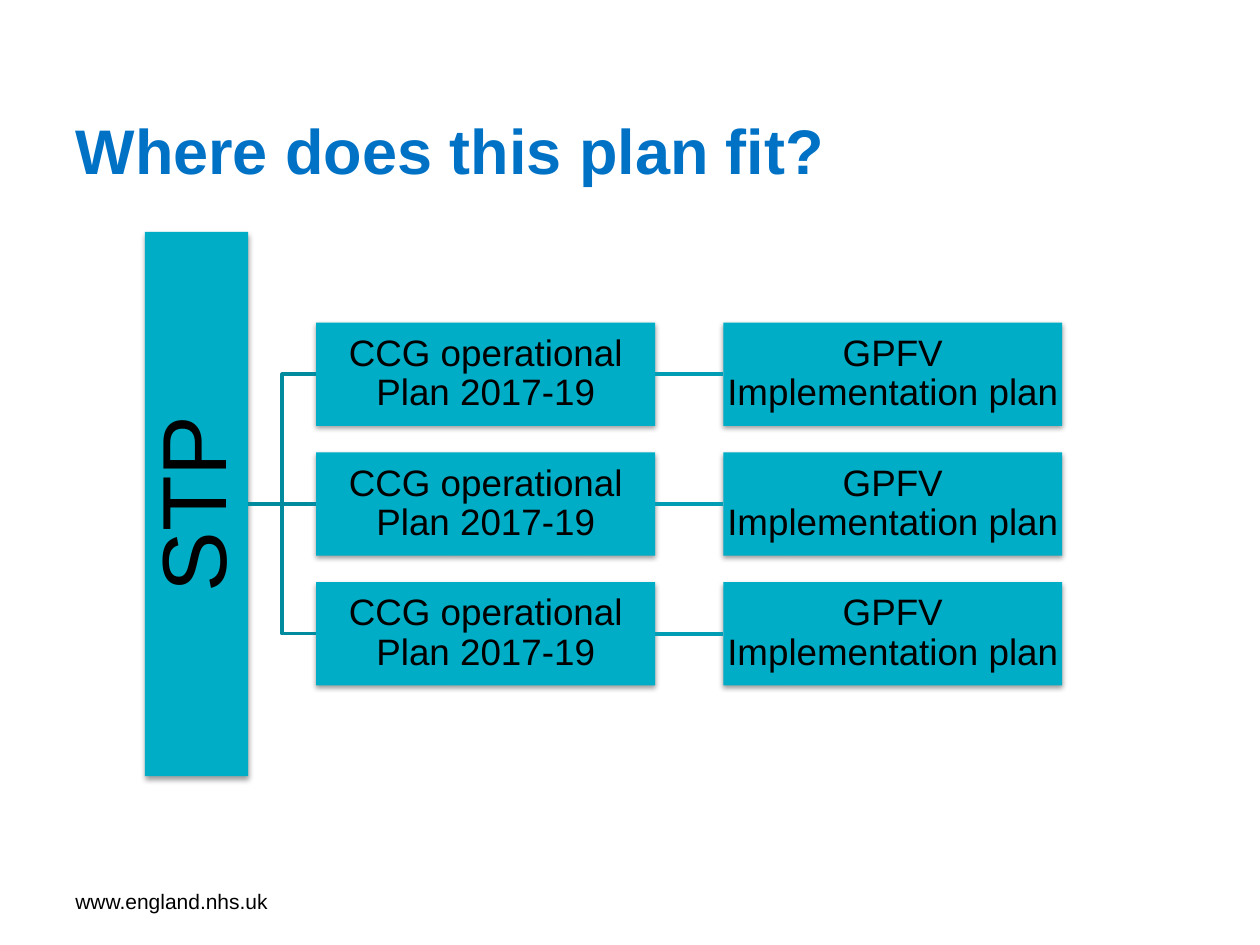
"""Build the slide showing how practice plans fit beneath the STP."""
from lxml import etree
from pptx import Presentation
from pptx import util as u
from pptx.dml.color import RGBColor
from pptx.enum import shapes, text
from pptx.oxml import parse_xml
from pptx.oxml.ns import nsdecls, qn

COLOURS = {"title": "0072C6", "box": "00ADC6", "text": "000000",
           "branch": "008B9F", "link": "009DB4"}
SHADOW = (f'<a:outerShdw {nsdecls("a")} blurRad="39370" dist="20320" dir="5400000" '
          'rotWithShape="0"><a:srgbClr val="000000"><a:alpha val="38000"/>'
          '</a:srgbClr></a:outerShdw>')
MARGINS = ("margin_left", "margin_top", "margin_right", "margin_bottom")


class PlanSlide:
    """Hold the style and the current slide."""

    def __init__(self, slide, font="Arial"):
        self.slide, self.font = slide, font

    def set_words(self, frame, words, size, colour="text", bold=False,
                  align=text.PP_ALIGN.LEFT):
        """Put one formatted paragraph in a text frame."""
        frame.text = words
        frame.word_wrap = True
        frame.vertical_anchor = text.MSO_ANCHOR.MIDDLE
        paragraph = frame.paragraphs[0]
        paragraph.alignment = align
        values = {"name": self.font, "size": u.Pt(size), "bold": bold}
        for name, value in values.items():
            setattr(paragraph.font, name, value)
        paragraph.font.color.rgb = RGBColor.from_string(COLOURS[colour])
        return paragraph

    def title(self, words, left, top, width, height):
        """Move and fill the title placeholder."""
        heading = self.slide.shapes.title
        place = {"left": left, "top": top, "width": width, "height": height}
        for name, value in place.items():
            setattr(heading, name, u.Inches(value))
        self.set_words(heading.text_frame, words, 36, "title", True)

    def label(self, words, *place):
        """Add a plain line of text."""
        box = self.slide.shapes.add_textbox(*map(u.Inches, place))
        self.set_words(box.text_frame, words, 12)

    def box(self, words, place, size, margin, rotation=0):
        """Add a shadowed rectangle with centred text."""
        box = self.slide.shapes.add_shape(
            shapes.MSO_SHAPE.RECTANGLE, *map(u.Inches, place))
        box.rotation = rotation
        box.fill.solid()
        box.fill.fore_color.rgb = RGBColor.from_string(COLOURS["box"])
        box.line.fill.background()
        box.shadow.inherit = False
        effects = box._element.spPr.find(qn("a:effectLst"))
        effects.append(parse_xml(SHADOW))
        for name in MARGINS:
            setattr(box.text_frame, name, u.Inches(margin))
        paragraph = self.set_words(box.text_frame, words, size,
                                   align=text.PP_ALIGN.CENTER)
        paragraph.line_spacing = 0.9
        return box

    def connector(self, kind, colour, start, end):
        """Add a connector between two points."""
        line = self.slide.shapes.add_connector(
            kind, *map(u.Inches, (*start, *end)))
        line.line.width = u.Pt(2)
        line.line.color.rgb = RGBColor.from_string(COLOURS[colour])
        etree.SubElement(line._element.spPr, qn("a:effectLst"))
        return line


def main():
    """Lay out the tree and save it."""
    deck = Presentation()
    deck.slide_width, deck.slide_height = u.Inches(10), u.Inches(7.5)
    page = PlanSlide(deck.slides.add_slide(deck.slide_layouts[5]))
    page.title("Where does this plan fit?", 0.5, 0.82, 8.05, 0.73)
    page.label("www.england.nhs.uk", 0.5, 6.95, 2.33, 0.4)

    box_w, box_h, middle, pitch = 2.69, 0.82, 4, 1.03
    ccg_left, gpfv_left, stp_right = 2.51, 5.74, 1.97
    straight, elbow = shapes.MSO_CONNECTOR.STRAIGHT, shapes.MSO_CONNECTOR.ELBOW
    stp = page.box("STP", (-0.6, middle - box_h / 2, 4.32, box_h), 52, 0.04, 270)

    for step in (-1, 0, 1):
        centre = middle + step * pitch
        top = centre - box_h / 2
        ccg = page.box("CCG operational Plan 2017-19",
                       (ccg_left, top, box_w, box_h), 21, 0.01)
        gpfv = page.box("GPFV Implementation plan",
                        (gpfv_left, top, box_w, box_h), 21, 0.01)
        branch = page.connector(elbow if step else straight, "branch",
                                (stp_right, middle), (ccg_left, centre))
        if not step:
            branch.begin_connect(stp, 2)
            branch.begin_x, branch.begin_y = u.Inches(stp_right), u.Inches(middle)
        branch.end_connect(ccg, 1)
        link = page.connector(straight, "link", (ccg_left + box_w, centre),
                              (gpfv_left, centre))
        link.begin_connect(ccg, 3)
        link.end_connect(gpfv, 1)

    deck.save("out.pptx")


if __name__ == "__main__":
    main()
